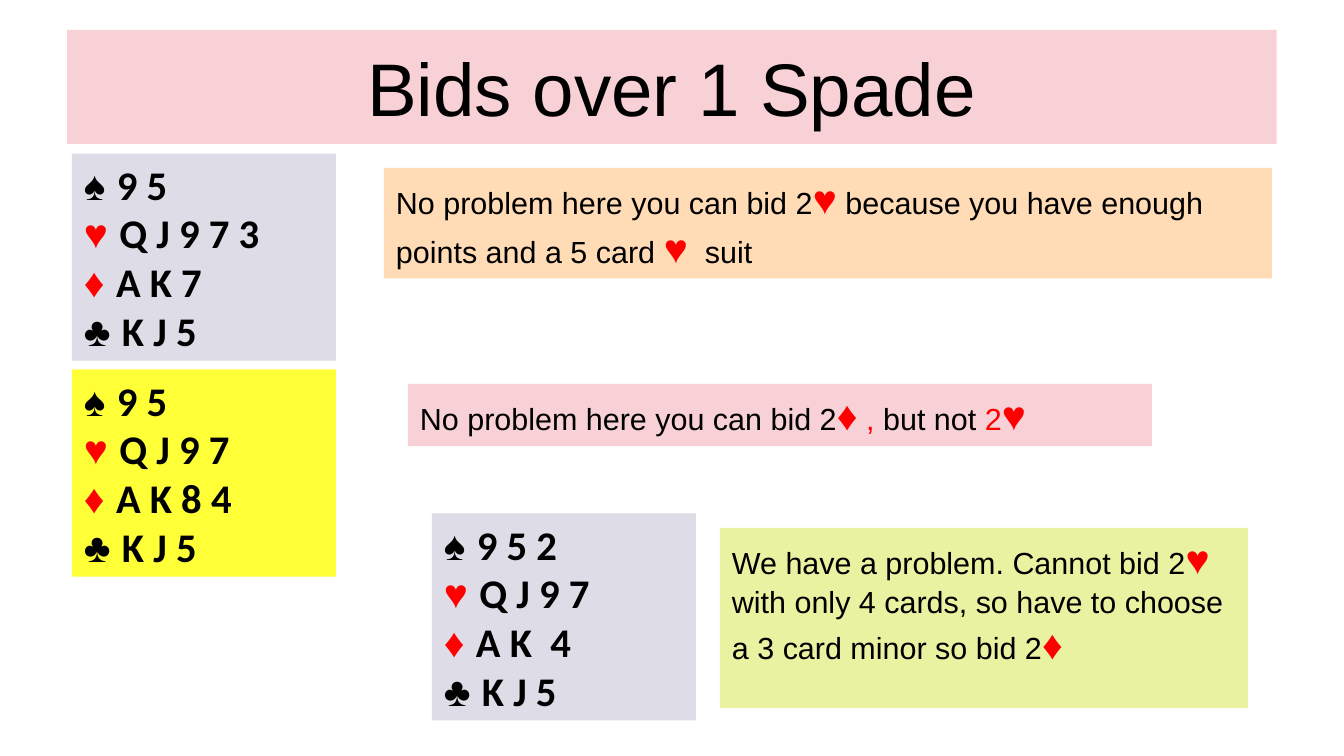
from pptx import Presentation
from pptx.dml.color import RGBColor
from pptx.enum.shapes import MSO_SHAPE
from pptx.enum.text import MSO_ANCHOR, PP_ALIGN
from pptx.util import Inches, Pt

COLORS = {
    "rose": "F7D1D5", "lavender": "DEDCE6", "peach": "FFDBB6",
    "yellow": "FFFF38", "lime": "E8F2A1", "black": "000000", "red": "FF0000",
}
GRID_COLUMNS = 56
HAND_COLUMNS, HAND_ROWS = 11, 8.63
HAND_RISE = 0.6
SUITS = "♠♥♦♣"
RED_SUITS = "♥♦"

DEALS = [
    {"row": 7, "hand_column": 3, "hand_fill": "lavender",
     "cards": ["9 5", "Q J 9 7 3", "A K 7", "K J 5"],
     "advice_column": 16, "advice_size": (37, 4.6), "advice_fill": "peach",
     "advice": [("No problem here you can bid 2", "black"), ("♥", "red"),
                (" because you have enough points and a 5 card ", "black"),
                ("♥", "red"), ("  suit", "black")]},
    {"row": 16, "hand_column": 3, "hand_fill": "yellow",
     "cards": ["9 5", "Q J 9 7", "A K 8 4", "K J 5"],
     "advice_column": 17, "advice_size": (31, 2.6), "advice_fill": "rose",
     "advice": [("No problem here you can bid 2", "black"), ("♦", "red"),
                (" , ", "red"), ("but not", "black"), (" 2", "red"),
                ("♥", "red")]},
    {"row": 22, "hand_column": 18, "hand_fill": "lavender",
     "cards": ["9 5 2", "Q J 9 7", "A K  4", "K J 5"],
     "advice_column": 30, "advice_size": (22, 7.5), "advice_fill": "lime",
     "advice": [("We have a problem. Cannot bid 2", "black"), ("♥", "red"),
                (" with only 4 cards, so have to choose a 3 card minor "
                 "so bid 2", "black"), ("♦", "red")]},
]


def add_panel(slide, cell, box, fill, anchor=MSO_ANCHOR.TOP):
    panel = slide.shapes.add_shape(
        MSO_SHAPE.RECTANGLE, *(round(length * cell) for length in box))
    panel.shadow.inherit = False
    panel.fill.solid()
    panel.fill.fore_color.rgb = RGBColor.from_string(COLORS[fill])
    panel.line.fill.background()
    frame = panel.text_frame
    frame.word_wrap = True
    frame.vertical_anchor = anchor
    return frame


def add_run(paragraph, wording, size, color="black", font="Arial", bold=False):
    run = paragraph.add_run()
    run.text = wording
    run.font.size = Pt(size)
    run.font.name = font
    run.font.bold = bold
    run.font.color.rgb = RGBColor.from_string(COLORS[color])


def add_title(slide, cell, box, wording):
    frame = add_panel(slide, cell, box, "rose", MSO_ANCHOR.MIDDLE)
    frame.margin_left = frame.margin_right = 0
    frame.margin_top = frame.margin_bottom = 0
    heading = frame.paragraphs[0]
    heading.alignment = PP_ALIGN.CENTER
    add_run(heading, wording, 44)


def add_hand(slide, cell, box, fill, cards):
    frame = add_panel(slide, cell, box, fill)
    for index, (suit, ranks) in enumerate(zip(SUITS, cards)):
        holding = frame.add_paragraph() if index else frame.paragraphs[0]
        holding.alignment = PP_ALIGN.LEFT
        suit_color = "red" if suit in RED_SUITS else "black"
        add_run(holding, suit + " ", 24, suit_color, bold=index > 0)
        add_run(holding, ranks, 24, font="Calibri", bold=True)


def add_advice(slide, cell, box, fill, phrases):
    advice = add_panel(slide, cell, box, fill).paragraphs[0]
    advice.alignment = PP_ALIGN.LEFT
    for wording, color in phrases:
        is_suit = wording in SUITS
        add_run(advice, wording, 24 if is_suit else 18, color, bold=is_suit)


def add_deal(slide, cell, deal):
    row = deal["row"]
    hand_box = (deal["hand_column"], row - HAND_RISE, HAND_COLUMNS, HAND_ROWS)
    advice_box = (deal["advice_column"], row, *deal["advice_size"])
    add_hand(slide, cell, hand_box, deal["hand_fill"], deal["cards"])
    add_advice(slide, cell, advice_box, deal["advice_fill"], deal["advice"])


def main():
    presentation = Presentation()
    presentation.slide_width = Inches(11.02)
    presentation.slide_height = Inches(6.2)
    slide = presentation.slides.add_slide(presentation.slide_layouts[6])
    cell = presentation.slide_width / GRID_COLUMNS
    add_title(slide, cell, (2.8, 1.25, 50.4, 4.75), "Bids over 1 Spade")
    for deal in DEALS:
        add_deal(slide, cell, deal)
    presentation.save("out.pptx")


if __name__ == "__main__":
    main()
